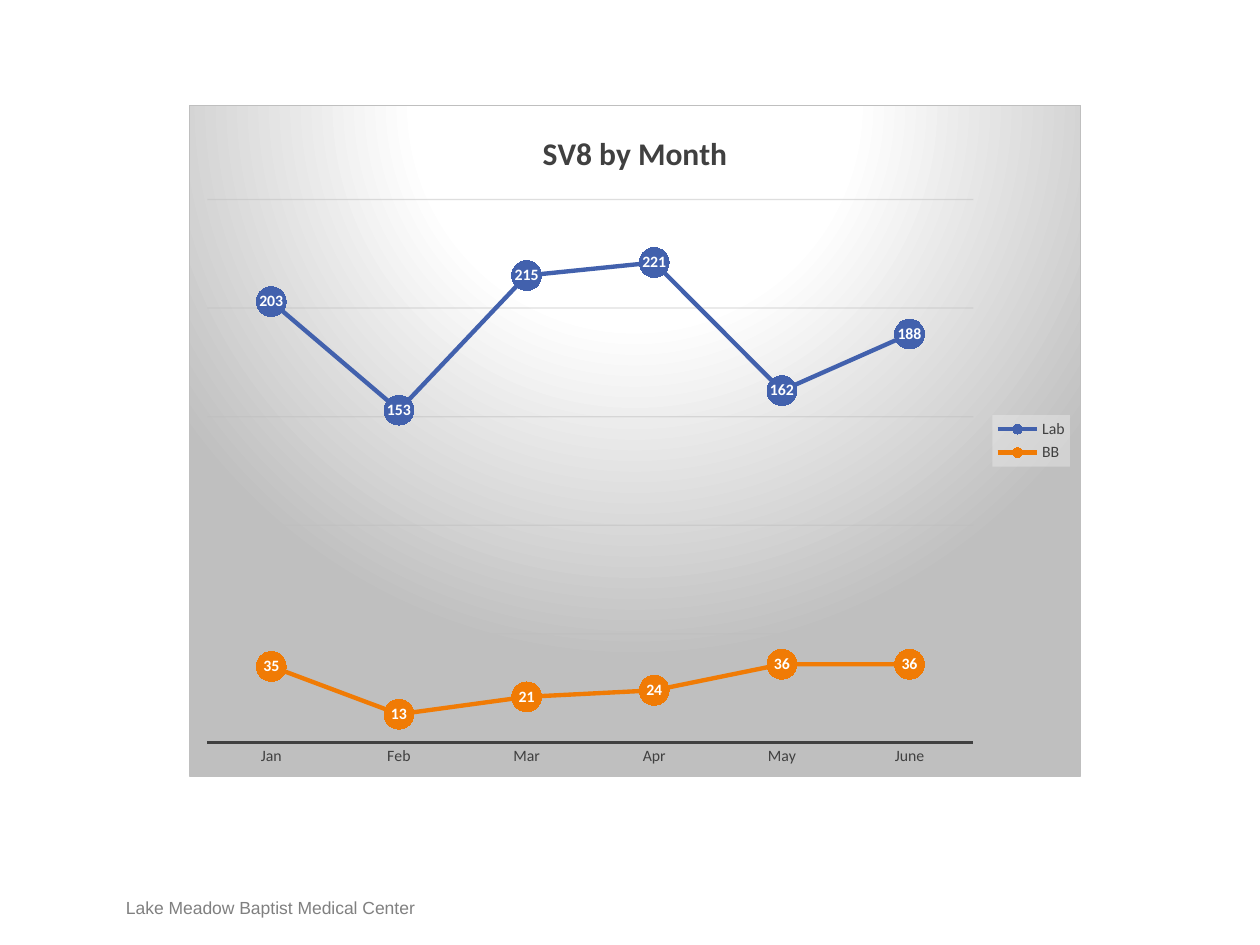
import lxml.etree
import pptx
import pptx.chart.data
import pptx.dml.color
import pptx.enum.chart
import pptx.enum.text
import pptx.oxml
import pptx.oxml.ns
import pptx.util
from pptx.util import Cm, Pt

MONTHS = ["Jan", "Feb", "Mar", "Apr", "May", "June"]
SERIES = [
    ("Lab", [203, 153, 215, 221, 162, 188], "4261AD"),
    ("BB", [35, 13, 21, 24, 36, 36], "F07B05"),
]
DARK = "404040"
GREY = "BFBFBF"
NAMESPACES = pptx.oxml.ns.nsdecls("c", "a")
qn = pptx.oxml.ns.qn


def color(value):
    return pptx.dml.color.RGBColor.from_string(value)


def format_font(font, name, size, value, bold=False):
    font.name = name
    font.size = Pt(size)
    font.bold = bold
    font.color.rgb = color(value)


def format_line(line, value, width):
    line.color.rgb = color(value)
    line.width = Pt(width)


def shape_properties(content):
    return pptx.oxml.parse_xml(f"<c:spPr {NAMESPACES}>{content}</c:spPr>")


def set_layout(parent, position, **values):
    for layout in parent.findall(qn("c:layout")):
        parent.remove(layout)
    settings = "".join(f'<c:{key} val="{value}"/>' for key, value in values.items())
    layout = pptx.oxml.parse_xml(
        f"<c:layout {NAMESPACES}><c:manualLayout>{settings}</c:manualLayout></c:layout>"
    )
    parent.insert(position, layout)


def format_background(chart):
    stops = [(0, "FFFFFF"), (39, "FFFFFF"), (100, GREY)]
    gradient = "".join(
        f'<a:gs pos="{position * 1000}"><a:srgbClr val="{value}"/></a:gs>'
        for position, value in stops
    )
    chart.element.find(qn("c:chart")).addnext(shape_properties(
        f'<a:gradFill><a:gsLst>{gradient}</a:gsLst><a:path path="circle">'
        '<a:fillToRect l="50000" t="-80000" r="50000" b="180000"/></a:path></a:gradFill>'
        f'<a:ln w="9525"><a:solidFill><a:srgbClr val="{GREY}"/></a:solidFill></a:ln>'
    ))


def format_title(chart):
    title = chart.chart_title
    title.text_frame.text = "SV8 by Month"
    format_font(title.text_frame.paragraphs[0].font, "Calibri", 18, DARK, True)
    set_layout(title._element, 1, xMode="edge", yMode="edge", x=0.39, y=0.03)


def format_axes(chart):
    category_axis = chart.category_axis
    category_axis.major_tick_mark = pptx.enum.chart.XL_TICK_MARK.NONE
    format_line(category_axis.format.line, DARK, 1.5)
    format_font(category_axis.tick_labels.font, "Calibri", 9, DARK)

    value_axis = chart.value_axis
    value_axis.minimum_scale = 0
    value_axis.maximum_scale = 250
    value_axis.major_unit = 50
    value_axis.visible = False
    gridlines = value_axis.major_gridlines
    format_line(gridlines.format.line, GREY, 0.75)
    for grid_color in gridlines._xAx.find(qn("c:majorGridlines")).iter(qn("a:srgbClr")):
        lxml.etree.SubElement(grid_color, qn("a:alpha"), val="50000")


def format_legend(chart):
    chart.has_legend = True
    legend = chart.legend
    legend.position = pptx.enum.chart.XL_LEGEND_POSITION.RIGHT
    legend.include_in_layout = False
    format_font(legend.font, "Calibri", 9, DARK)
    legend._element.find(qn("c:overlay")).addnext(shape_properties(
        '<a:solidFill><a:srgbClr val="F2F2F2"><a:alpha val="39000"/></a:srgbClr></a:solidFill>'
    ))


def format_series(series, value):
    series.smooth = False
    format_line(series.format.line, value, 2.5)
    marker = series.marker
    marker.style = pptx.enum.chart.XL_MARKER_STYLE.CIRCLE
    marker.size = 17
    marker.format.fill.solid()
    marker.format.fill.fore_color.rgb = color(value)
    marker.format.line.fill.background()
    labels = series.data_labels
    labels.show_value = True
    labels.position = pptx.enum.chart.XL_LABEL_POSITION.CENTER
    format_font(labels.font, "Calibri", 9, "FFFFFF", True)


def add_line_chart(slide):
    chart_data = pptx.chart.data.CategoryChartData()
    chart_data.categories = MONTHS
    for name, values, _ in SERIES:
        chart_data.add_series(name, values)
    chart = slide.shapes.add_chart(
        pptx.enum.chart.XL_CHART_TYPE.LINE_MARKERS,
        Cm(3.81), Cm(2.12), Cm(17.98), Cm(13.54), chart_data,
    ).chart
    format_font(chart.font, "Calibri", 10, "000000")
    format_background(chart)
    format_title(chart)
    format_axes(chart)
    format_legend(chart)
    chart.plots[0].vary_by_categories = False
    for series, (_, _, value) in zip(chart.plots[0].series, SERIES):
        format_series(series, value)
    plot_area = chart.element.find(qn("c:chart")).find(qn("c:plotArea"))
    set_layout(plot_area, 0, layoutTarget="inner", xMode="edge", yMode="edge",
               x=0.02, y=0.14, w=0.86, h=0.81)


def add_footer(slide):
    text_frame = slide.shapes.add_textbox(Cm(2.54), Cm(18.08), Cm(8.05), Cm(0.43)).text_frame
    text_frame.word_wrap = True
    text_frame.vertical_anchor = pptx.enum.text.MSO_ANCHOR.BOTTOM
    text_frame.margin_left = text_frame.margin_right = 0
    text_frame.margin_top = text_frame.margin_bottom = 0
    paragraph = text_frame.paragraphs[0]
    paragraph.text = "Lake Meadow Baptist Medical Center"
    format_font(paragraph.font, "Arial", 10, "808080")


def main():
    presentation = pptx.Presentation()
    presentation.slide_width = Cm(25.4)
    presentation.slide_height = Cm(19.05)
    slide = presentation.slides.add_slide(presentation.slide_layouts[6])
    add_footer(slide)
    add_line_chart(slide)
    presentation.save("out.pptx")


if __name__ == "__main__":
    main()
